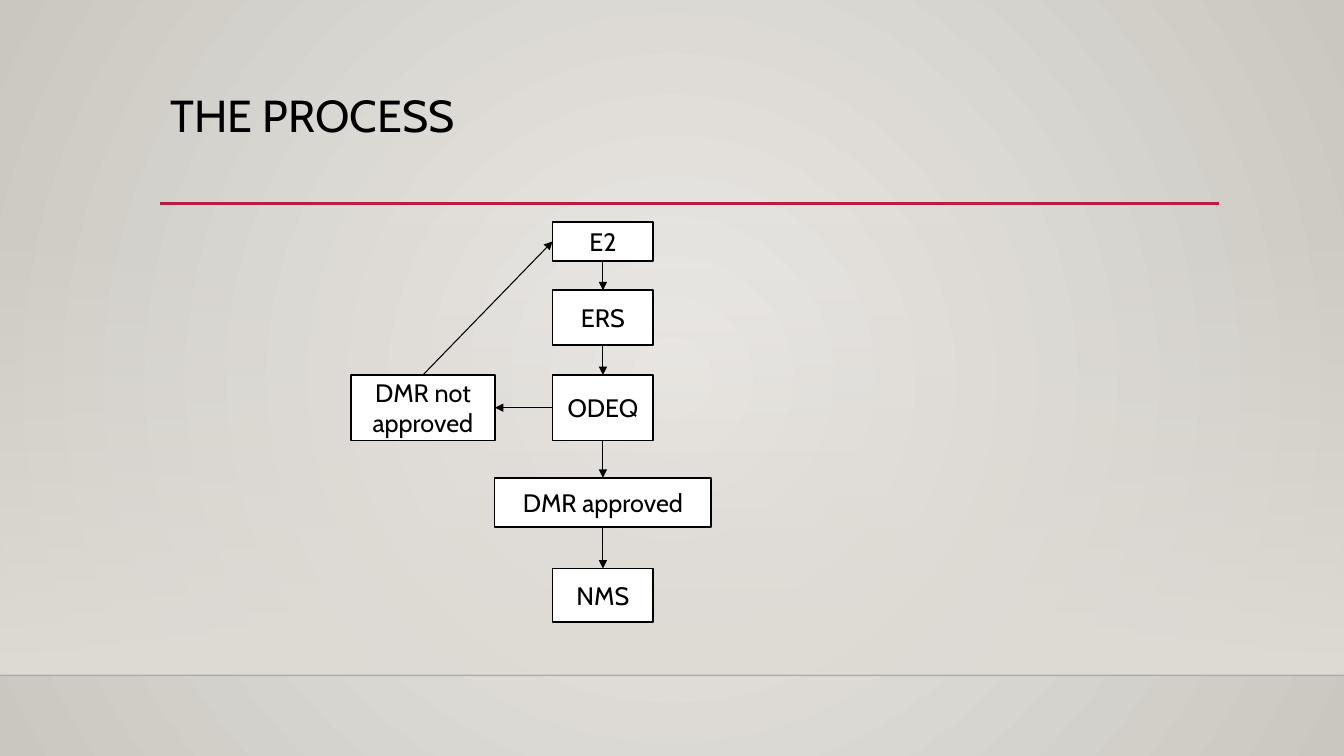
from lxml import etree
from pptx import Presentation
from pptx import util as u
from pptx.dml.color import RGBColor
from pptx.enum import shapes, text
from pptx.oxml.ns import qn

BLACK = RGBColor(0x00, 0x00, 0x00)
WHITE = RGBColor(0xFF, 0xFF, 0xFF)
RED = RGBColor(0xB7, 0x1E, 0x42)
PALE = RGBColor(0xEC, 0xEA, 0xE7)
GREY = RGBColor(0xCA, 0xC7, 0xC1)
SAND = RGBColor(0xDF, 0xDB, 0xD5)
FONT = "Cabin"
WIDE, HIGH = 13.33, 7.5
TOP, LEFT, BOTTOM, RIGHT = range(4)  # connection sites of a rectangle


def shade(fill, first, last):
    fill.gradient()
    for stop, color in zip(fill.gradient_stops, (first, last)):
        stop.color.rgb = color


def fade(item, percent):
    """Make the first colour of an item partly transparent."""
    color = next(item.element.iter(qn("a:srgbClr")))
    etree.SubElement(color, qn("a:alpha"), val=str(percent * 1000))


def rule(slide, color, width, x1=0, y1=0, x2=0, y2=0):
    line = slide.shapes.add_connector(
        shapes.MSO_CONNECTOR.STRAIGHT, *map(u.Inches, (x1, y1, x2, y2)))
    line.line.color.rgb = color
    line.line.width = u.Pt(width)
    etree.SubElement(line.element.spPr, qn("a:effectLst"))
    return line


def backdrop(slide):
    # Radial background
    shade(slide.background.fill, PALE, GREY)
    grad = next(slide.element.iter(qn("a:gradFill")))
    grad.remove(grad.find(qn("a:lin")))
    path = etree.SubElement(grad, qn("a:path"), path="circle")
    etree.SubElement(path, qn("a:fillToRect"),
                     {side: "50000" for side in "ltrb"})

    # Wall that fades in downwards, and its floor line
    top, floor = 2.21, 6.7
    wall = slide.shapes.add_shape(
        shapes.MSO_SHAPE.RECTANGLE,
        *map(u.Inches, (0, top, WIDE, floor - top)))
    wall.shadow.inherit = False
    shade(wall.fill, SAND, SAND)
    wall.fill.gradient_angle = 270
    wall.line.fill.background()
    fade(wall, 0)
    fade(rule(slide, RGBColor(0, 0, 1), 1, 0, floor, WIDE, floor), 20)


def heading(slide, words, x, y, w, h):
    title = slide.shapes.title
    title.left, title.top, title.width, title.height = map(
        u.Inches, (x, y, w, h))
    frame = title.text_frame
    frame.text = words
    frame.vertical_anchor = text.MSO_ANCHOR.TOP
    para = frame.paragraphs[0]
    para.alignment = text.PP_ALIGN.LEFT
    para.line_spacing = 0.9
    style(para, 32)
    rule(slide, RED, 2.5, x, y + 1.14, x + w, y + 1.14)


def style(para, size):
    para.font.name = FONT
    para.font.size = u.Pt(size)
    para.font.color.rgb = BLACK


def node(slide, words, x, y, w, h):
    box = slide.shapes.add_shape(
        shapes.MSO_SHAPE.RECTANGLE, *map(u.Inches, (x, y, w, h)))
    box.shadow.inherit = False
    box.fill.solid()
    box.fill.fore_color.rgb = WHITE
    box.line.color.rgb = BLACK
    box.line.width = u.Pt(1.25)
    frame = box.text_frame
    frame.text = words
    frame.word_wrap = True
    frame.vertical_anchor = text.MSO_ANCHOR.MIDDLE
    para = frame.paragraphs[0]
    para.alignment = text.PP_ALIGN.CENTER
    style(para, 18)
    return box


def arrow(slide, start, out, end, into):
    line = rule(slide, BLACK, 0.75)
    line.begin_connect(start, out)
    line.end_connect(end, into)
    etree.SubElement(line.line._get_or_add_ln(), qn("a:tailEnd"),
                     type="triangle")


def flow(slide, x, y):
    # Main column, centred on one axis: words, drop, width, height
    steps = [("E2", 0, 1, 0.39),
             ("ERS", 0.68, 1, 0.54),
             ("ODEQ", 1.52, 1, 0.65),
             ("DMR approved", 2.54, 2.15, 0.49),
             ("NMS", 3.44, 1, 0.53)]
    chain = [node(slide, words, x - w / 2, y + drop, w, h)
             for words, drop, w, h in steps]
    for upper, lower in zip(chain, chain[1:]):
        arrow(slide, upper, BOTTOM, lower, TOP)

    # Return loop
    back = node(slide, "DMR not approved", x - 2.5, y + 1.52, 1.43, 0.65)
    arrow(slide, chain[2], LEFT, back, RIGHT)
    arrow(slide, back, TOP, chain[0], LEFT)


def main():
    deck = Presentation()
    deck.slide_width = u.Inches(WIDE)
    deck.slide_height = u.Inches(HIGH)
    slide = deck.slides.add_slide(deck.slide_layouts[5])
    backdrop(slide)
    heading(slide, "THE PROCESS", 1.59, 0.88, 10.5, 1.15)
    flow(slide, 5.98, 2.2)
    deck.save("out.pptx")


if __name__ == "__main__":
    main()
